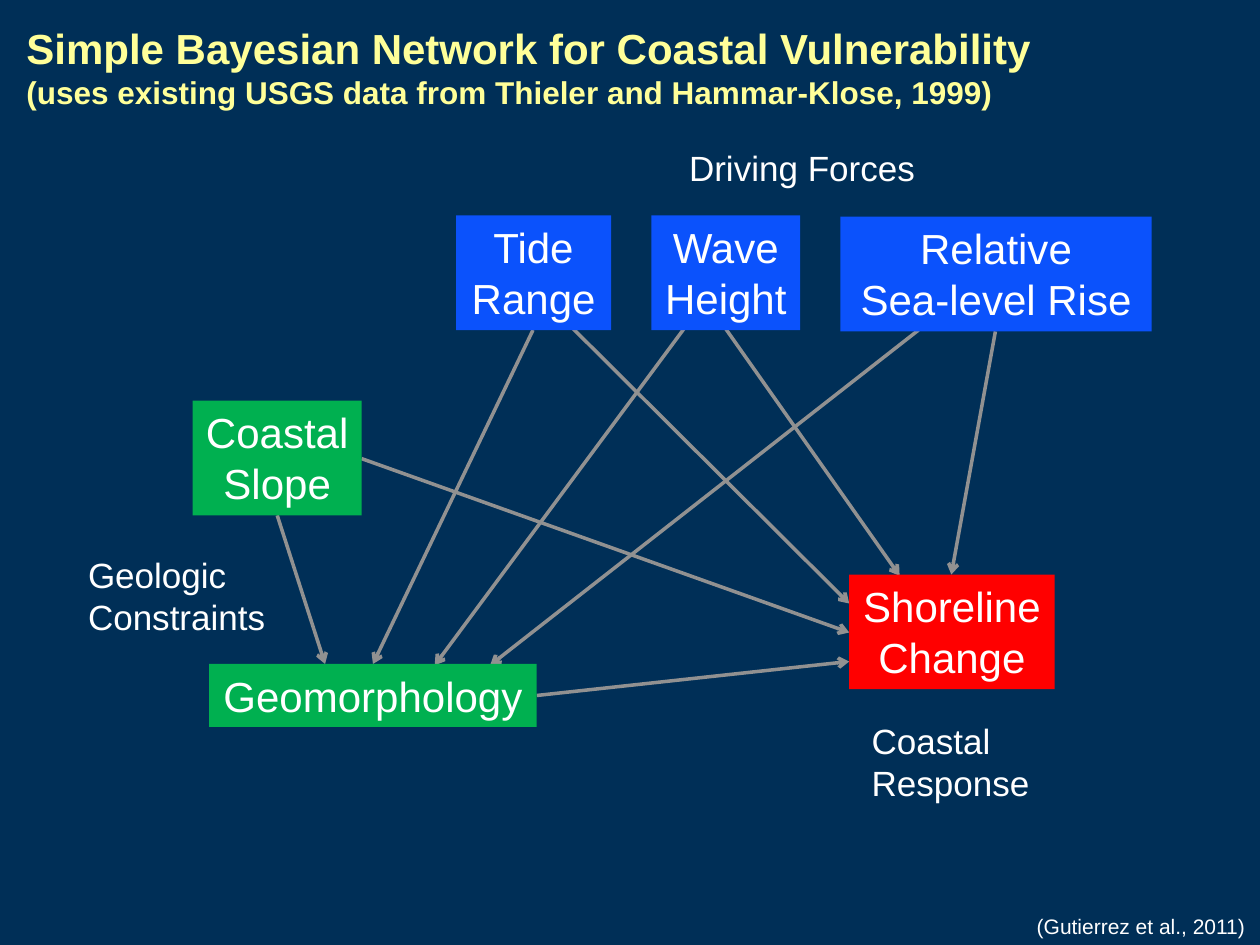
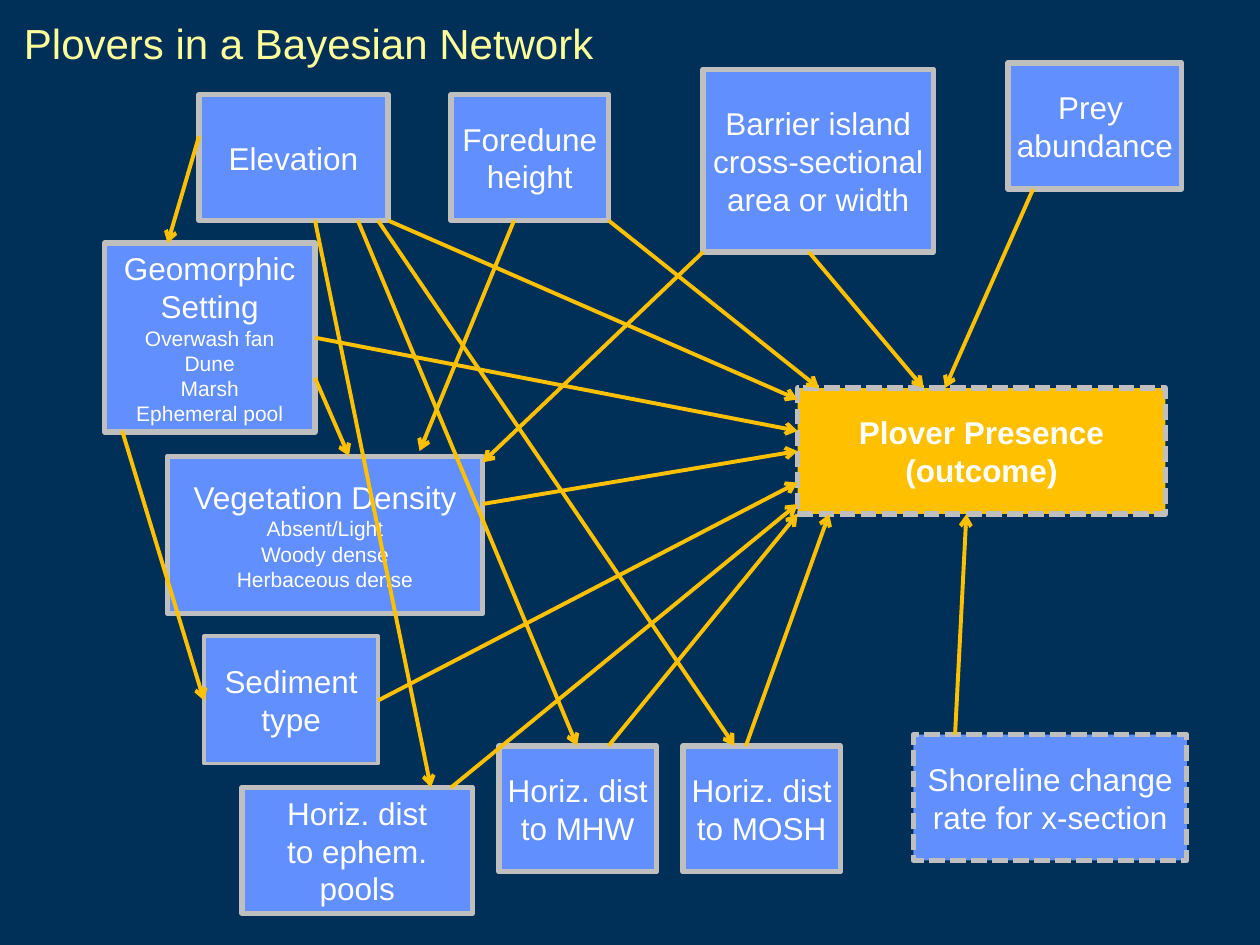
"""Build two slides of Bayesian network diagrams for coastal change and plovers."""
from dataclasses import dataclass
from typing import NamedTuple, Optional

from lxml import etree
from pptx import Presentation
from pptx import util as u
from pptx.dml import color
from pptx.enum import dml, shapes, text
from pptx.oxml import ns


@dataclass(frozen=True)
class Theme:
    font: str = "Arial"
    background: str = "002F57"
    title: str = "FFFF99"
    white: str = "FFFFFF"
    force: str = "0B52FC"
    geology: str = "00B050"
    response: str = "FF0000"
    factor: str = "618FFD"
    outcome: str = "FFC000"
    border: str = "BFBFBF"
    gray_arrow: str = "919191"
    title_size: float = 24
    node_size: float = 24
    label_size: float = 20
    factor_size: float = 18
    small_size: float = 12


THEME = Theme()


@dataclass(frozen=True)
class BoxStyle:
    fill: str
    size: float = THEME.factor_size
    bold: bool = False
    border: float = 3
    dashed: bool = False
    anchor: text.MSO_ANCHOR = text.MSO_ANCHOR.MIDDLE


class Box(NamedTuple):
    words: str
    left: float
    top: float
    width: float
    height: float
    style: BoxStyle
    details: str = ""


class Label(NamedTuple):
    words: str
    left: float
    top: float
    width: float
    height: float
    size: float = THEME.label_size


class Link(NamedTuple):
    x1: float
    y1: float
    x2: float
    y2: float


def node_style(fill: str) -> BoxStyle:
    return BoxStyle(fill, THEME.node_size, border=0, anchor=text.MSO_ANCHOR.TOP)


FORCE = node_style(THEME.force)
GEOLOGY = node_style(THEME.geology)
RESPONSE = node_style(THEME.response)
FACTOR = BoxStyle(THEME.factor)
THIN_FACTOR = BoxStyle(THEME.factor, border=2.25)
DASHED_FACTOR = BoxStyle(THEME.factor, dashed=True)
OUTCOME = BoxStyle(THEME.outcome, bold=True, dashed=True)

COAST_LABELS = [
    Label("Driving Forces", 5.37, 1.11, 2.01, 0.44),
    Label("Geologic\nConstraints", 0.6, 4.34, 1.62, 0.77),
    Label("Coastal\nResponse", 6.82, 5.66, 1.47, 0.77),
    Label("(Gutierrez et al., 2011)", 8.13, 7.2, 1.87, 0.3, THEME.small_size),
]
COAST_BOXES = [
    Box("Tide\nRange", 3.62, 1.71, 1.23, 0.91, FORCE),
    Box("Wave\nHeight", 5.17, 1.71, 1.18, 0.91, FORCE),
    Box("Relative\nSea-level Rise", 6.67, 1.72, 2.47, 0.91, FORCE),
    Box("Coastal\nSlope", 1.53, 3.18, 1.34, 0.91, GEOLOGY),
    Box("Geomorphology", 1.66, 5.27, 2.6, 0.5, GEOLOGY),
    Box("Shoreline\nChange", 6.74, 4.56, 1.63, 0.91, RESPONSE),
]
COAST_LINKS = [
    Link(7.9, 2.63, 7.55, 4.56),
    Link(5.76, 2.61, 7.14, 4.57),
    Link(7.29, 2.62, 3.89, 5.28),
    Link(5.45, 2.58, 3.45, 5.28),
    Link(4.52, 2.58, 6.74, 4.79),
    Link(4.23, 2.62, 2.96, 5.27),
    Link(2.87, 3.64, 6.74, 5.02),
    Link(2.2, 4.09, 2.58, 5.27),
    Link(4.26, 5.52, 6.74, 5.25),
]
PLOVER_BOXES = [
    Box("Foredune\nheight", 3.58, 0.75, 1.25, 1, FACTOR),
    Box("Elevation", 1.58, 0.75, 1.5, 1, FACTOR),
    Box("Barrier island\ncross-sectional\narea or width", 5.58, 0.55, 1.83, 1.45, FACTOR),
    Box("Geomorphic\nSetting", 0.83, 1.93, 1.67, 1.5, FACTOR,
        "Overwash fan\nDune\nMarsh\nEphemeral pool"),
    Box("Vegetation Density", 1.33, 3.62, 2.5, 1.25, FACTOR,
        "Absent/Light\nWoody dense\nHerbaceous dense"),
    Box("Shoreline change\nrate for x-section", 7.25, 5.83, 2.17, 1, DASHED_FACTOR),
    Box("Plover Presence\n(outcome)", 6.33, 3.08, 2.92, 1, OUTCOME),
    Box("Sediment\ntype", 1.62, 5.05, 1.38, 1.01, THIN_FACTOR),
    Box("Horiz. dist\nto MHW", 3.96, 5.92, 1.25, 1, FACTOR),
    Box("Horiz. dist\nto MOSH", 5.42, 5.92, 1.25, 1, FACTOR),
    Box("Prey \nabundance", 8, 0.5, 1.38, 1, FACTOR),
    Box("Horiz. dist\nto ephem.\npools", 1.92, 6.25, 1.83, 1, FACTOR),
]
PLOVER_LINKS = [
    Link(3.08, 1.75, 6.33, 3.17),
    Link(4.83, 1.75, 6.5, 3.08),
    Link(6.42, 2, 7.33, 3.08),
    Link(2.5, 2.68, 6.33, 3.42),
    Link(3.83, 4, 6.33, 3.58),
    Link(3, 5.56, 6.33, 3.83),
    Link(4.83, 5.92, 6.33, 4.08),
    Link(5.92, 5.92, 6.58, 4.08),
    Link(7.58, 5.83, 7.67, 4.08),
    Link(5.58, 2, 3.83, 3.67),
    Link(4.08, 1.75, 3.33, 3.58),
    Link(2.5, 3, 2.77, 3.62),
    Link(0.97, 3.42, 1.62, 5.56),
    Link(1.58, 1.08, 1.33, 1.93),
    Link(8.2, 1.5, 7.5, 3.08),
    Link(2.84, 1.75, 4.58, 5.92),
    Link(3, 1.75, 5.83, 5.92),
    Link(2.5, 1.75, 3.42, 6.25),
    Link(3.58, 6.25, 6.33, 4),
]


def rgb(value: str) -> color.RGBColor:
    return color.RGBColor.from_string(value)


def inches(*values: float) -> list:
    return [u.Inches(v) for v in values]


def write(tf, words: str, *, size: float, ink: str = THEME.white, bold: bool = False,
          align=text.PP_ALIGN.LEFT, more: bool = False) -> None:
    for i, line in enumerate(words.split("\n")):
        p = tf.add_paragraph() if more or i else tf.paragraphs[0]
        p.alignment = align
        r = p.add_run()
        r.text = line
        r.font.name = THEME.font
        r.font.size = u.Pt(size)
        r.font.bold = bold
        r.font.color.rgb = rgb(ink)


def fit_frame(tf, anchor=text.MSO_ANCHOR.TOP) -> None:
    tf.word_wrap = False
    tf.vertical_anchor = anchor
    tf.auto_size = text.MSO_AUTO_SIZE.NONE


def add_slide(prs, title: str, at: tuple, *, bold: bool = False,
              subtitle: Optional[str] = None):
    s = prs.slides.add_slide(prs.slide_layouts[5])
    sp = s.shapes.title
    sp.left, sp.top, sp.width, sp.height = inches(*at)
    tf = sp.text_frame
    fit_frame(tf)
    write(tf, title, size=THEME.title_size, ink=THEME.title, bold=bold)
    if subtitle:
        write(tf, subtitle, size=THEME.factor_size, ink=THEME.title, bold=bold, more=True)
    return s


def add_label(s, label: Label) -> None:
    sp = s.shapes.add_textbox(*inches(*label[1:5]))
    fit_frame(sp.text_frame)
    write(sp.text_frame, label.words, size=label.size)


def add_box(s, box: Box) -> None:
    style = box.style
    sp = s.shapes.add_shape(shapes.MSO_SHAPE.RECTANGLE, *inches(*box[1:5]))
    sp.shadow.inherit = False
    sp.fill.solid()
    sp.fill.fore_color.rgb = rgb(style.fill)
    if style.border:
        sp.line.color.rgb = rgb(THEME.border)
        sp.line.width = u.Pt(style.border)
        if style.dashed:
            sp.line.dash_style = dml.MSO_LINE.SQUARE_DOT
    else:
        sp.line.fill.background()
    tf = sp.text_frame
    fit_frame(tf, style.anchor)
    center = text.PP_ALIGN.CENTER
    write(tf, box.words, size=style.size, bold=style.bold, align=center)
    if box.details:
        write(tf, box.details, size=THEME.small_size, align=center, more=True)


def add_link(s, link: Link, ink: str, width: float) -> None:
    c = s.shapes.add_connector(shapes.MSO_CONNECTOR.STRAIGHT, *inches(*link))
    c.line.color.rgb = rgb(ink)
    c.line.width = u.Pt(width)
    props = c._element.spPr
    etree.SubElement(props.find(ns.qn("a:ln")), ns.qn("a:tailEnd"), type="arrow")
    etree.SubElement(props, ns.qn("a:effectLst"))


def build_coast(prs) -> None:
    s = add_slide(prs, "Simple Bayesian Network for Coastal Vulnerability",
                  (0.11, 0.13, 8.25, 0.81), bold=True,
                  subtitle="(uses existing USGS data from Thieler and Hammar-Klose, 1999)")
    for label in COAST_LABELS:
        add_label(s, label)
    for link in COAST_LINKS:
        add_link(s, link, THEME.gray_arrow, 2)
    for box in COAST_BOXES:
        add_box(s, box)


def build_plovers(prs) -> None:
    s = add_slide(prs, "Plovers in a Bayesian Network", (0.09, 0.09, 4.77, 0.5))
    for box in PLOVER_BOXES:
        add_box(s, box)
    for link in PLOVER_LINKS:
        add_link(s, link, THEME.outcome, 2.25)


def main() -> None:
    prs = Presentation()
    prs.slide_width, prs.slide_height = inches(10, 7.5)
    fill = prs.slide_master.background.fill
    fill.solid()
    fill.fore_color.rgb = rgb(THEME.background)
    build_coast(prs)
    build_plovers(prs)
    prs.save("out.pptx")


if __name__ == "__main__":
    main()
